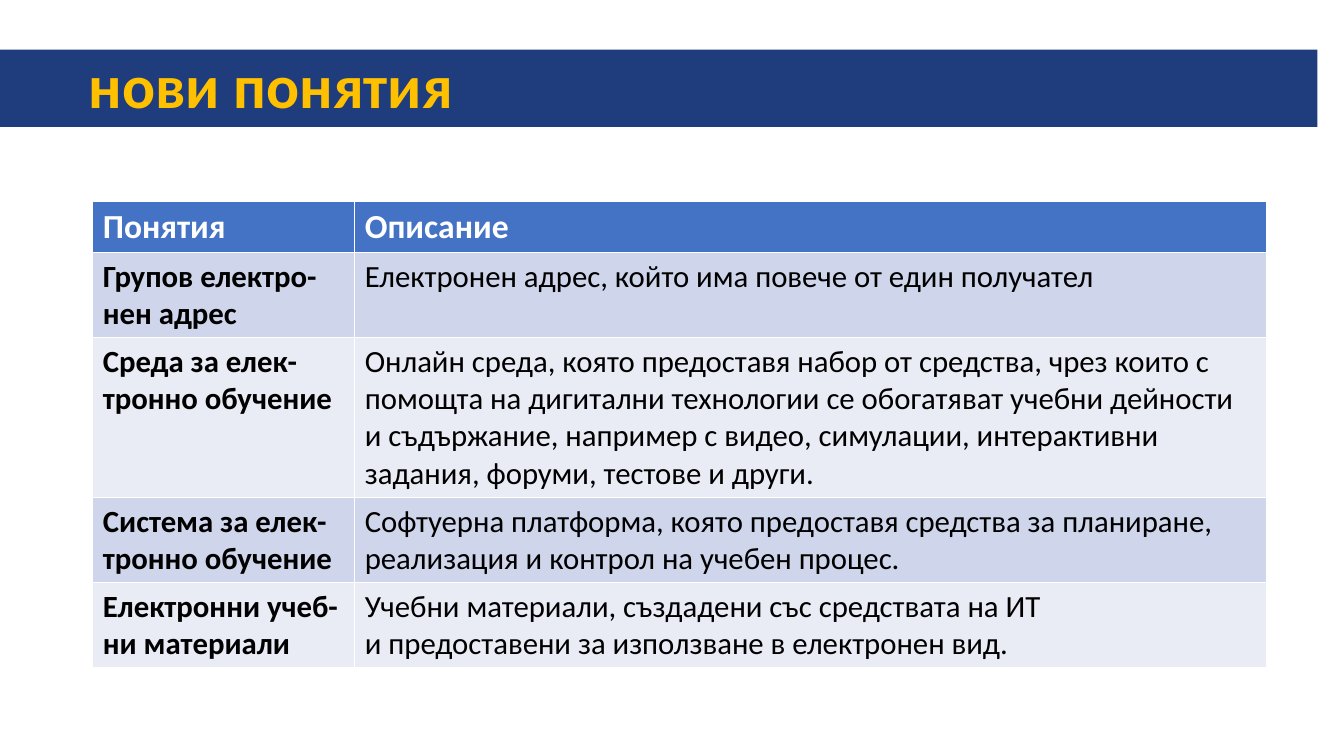
from pptx import Presentation
from pptx.dml.color import RGBColor
from pptx.enum.shapes import MSO_SHAPE
from pptx.enum.text import MSO_ANCHOR, PP_ALIGN
from pptx.util import Cm, Pt

# Content: each cell is a list of paragraphs
TITLE = "нови понятия"
HEADER = (["Понятия"], ["Описание"])
TERMS = [
    (["Групов електро-", "нен адрес"],
     ["Електронен адрес, който има повече от един получател"]),
    (["Среда за елек-", "тронно обучение"],
     ["Онлайн среда, която предоставя набор от средства, чрез които с "
      "помощта на дигитални технологии се обогатяват учебни дейности и "
      "съдържание, например с видео, симулации, интерактивни задания, "
      "форуми, тестове и други."]),
    (["Система за елек-", "тронно обучение"],
     ["Софтуерна платформа, която предоставя средства за планиране, "
      "реализация и контрол на учебен процес."]),
    (["Електронни учеб-", "ни материали"],
     ["Учебни материали, създадени със средствата на ИТ",
      "и предоставени за използване в електронен вид."]),
]

# Layout in cm, and colours
BAND = (0, 1.25, 33.2, 1.95)
TABLE_LEFT, TABLE_TOP = 2.34, 5.08
COL_WIDTHS = (6.6, 22.99)
ROW_HEIGHTS = (1.25, 2.14, 4.03, 2.14, 2.14)
NAVY, GOLD, WHITE, BLACK = "1F3D7C", "FFC000", "FFFFFF", "000000"
HEADER_FILL, ROW_FILLS = "4472C4", ("CFD5EA", "E9EBF5")


def paint(fill, color):
    fill.solid()
    fill.fore_color.rgb = RGBColor.from_string(color)


def write(tf, lines, size=22, color=BLACK, bold=False, spacing=1.0):
    tf.word_wrap = True
    for i, line in enumerate(lines):
        p = tf.paragraphs[0] if i == 0 else tf.add_paragraph()
        p.alignment = PP_ALIGN.LEFT
        p.line_spacing = spacing
        r = p.add_run()
        r.text = line
        r.font.name = "Calibri"
        r.font.size = Pt(size)
        r.font.bold = bold
        r.font.color.rgb = RGBColor.from_string(color)


prs = Presentation()
prs.slide_width, prs.slide_height = Cm(33.87), Cm(19.05)
s = prs.slides.add_slide(prs.slide_layouts[6])

# Title band
sp = s.shapes.add_shape(MSO_SHAPE.RECTANGLE, *map(Cm, BAND))
sp.shadow.inherit = False
paint(sp.fill, NAVY)
sp.line.fill.background()
tf = sp.text_frame
tf.vertical_anchor = MSO_ANCHOR.MIDDLE
tf.margin_left = Cm(2.23)
write(tf, [TITLE], size=44, color=GOLD, bold=True, spacing=0.9)

# Table of terms; the default table style draws the white borders
rows = [HEADER, *TERMS]
table = s.shapes.add_table(
    len(rows), len(COL_WIDTHS), Cm(TABLE_LEFT), Cm(TABLE_TOP),
    Cm(sum(COL_WIDTHS)), Cm(sum(ROW_HEIGHTS))).table
for column, width in zip(table.columns, COL_WIDTHS):
    column.width = Cm(width)
for i, (row, height) in enumerate(zip(rows, ROW_HEIGHTS)):
    table.rows[i].height = Cm(height)
    for j, lines in enumerate(row):
        cell = table.cell(i, j)
        if i == 0:
            paint(cell.fill, HEADER_FILL)
            write(cell.text_frame, lines, size=24, color=WHITE, bold=True)
        else:
            paint(cell.fill, ROW_FILLS[(i - 1) % 2])
            write(cell.text_frame, lines, bold=j == 0)

prs.save("out.pptx")
